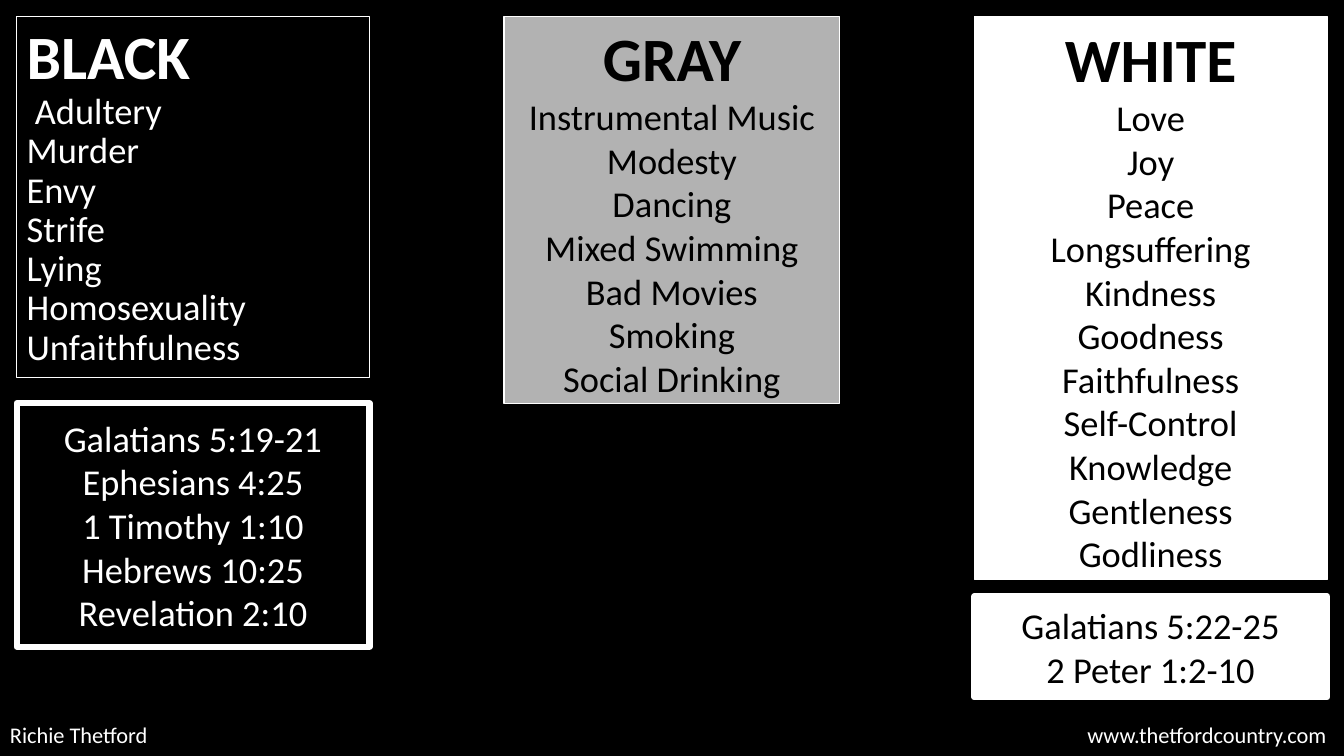
from dataclasses import dataclass

from lxml.etree import SubElement
from pptx import Presentation
from pptx.dml.color import RGBColor
from pptx.enum.shapes import MSO_SHAPE
from pptx.enum.text import MSO_ANCHOR, PP_ALIGN
from pptx.oxml.ns import qn
from pptx.util import Pt

EMU_PER_PX = 9525


@dataclass(frozen=True)
class Theme:
    black: RGBColor = RGBColor(0x00, 0x00, 0x00)
    gray: RGBColor = RGBColor(0xB2, 0xB2, 0xB2)
    white: RGBColor = RGBColor(0xFF, 0xFF, 0xFF)
    font: str = "Calibri"
    heading: int = 44
    body: int = 26
    footer: int = 16
    thin: float = 0.75
    thick: float = 4.5


THEME = Theme()
BLACK_ITEMS = [" Adultery", "Murder", "Envy", "Strife", "Lying",
               "Homosexuality", "Unfaithfulness"]
GRAY_ITEMS = ["Instrumental Music", "Modesty", "Dancing", "Mixed Swimming",
              "Bad Movies", "Smoking", "Social Drinking"]
WHITE_ITEMS = ["Love", "Joy", "Peace", "Longsuffering", "Kindness", "Goodness",
               "Faithfulness", "Self-Control", "Knowledge", "Gentleness", "Godliness"]
BLACK_VERSES = ["Galatians 5:19-21", "Ephesians 4:25", "1 Timothy 1:10",
                "Hebrews 10:25", "Revelation 2:10"]
WHITE_VERSES = ["Galatians 5:22-25", "2 Peter 1:2-10"]


def px(*lengths):
    return [length * EMU_PER_PX for length in lengths]


def write(paragraph, text, *, size, color, bold=False,
          align=PP_ALIGN.CENTER, spacing=1.0):
    paragraph.alignment = align
    paragraph.line_spacing = spacing
    run = paragraph.add_run()
    run.text = text
    font = run.font
    font.name, font.size, font.bold = THEME.font, Pt(size), bold
    font.color.rgb = color


def add_panel(slide, box, lines, *, fill, color, border, heading=None, **layout):
    """Draw a bordered rectangle holding an optional heading and a list of lines."""
    shape = slide.shapes.add_shape(MSO_SHAPE.RECTANGLE, *px(*box))
    shape.shadow.inherit = False
    shape.fill.solid()
    shape.fill.fore_color.rgb = fill
    shape.line.color.rgb = THEME.white
    shape.line.width = Pt(border)
    frame = shape.text_frame
    frame.word_wrap = True
    frame.vertical_anchor = MSO_ANCHOR.MIDDLE
    paragraph = frame.paragraphs[0]
    if heading:
        write(paragraph, heading, size=THEME.heading, color=color, bold=True, **layout)
        paragraph = frame.add_paragraph()
    for index, line in enumerate(lines):
        if index:
            paragraph = frame.add_paragraph()
        write(paragraph, line, size=THEME.body, color=color, **layout)


def add_footer(slide, box, left_text, right_text, tab):
    """Put two texts on one line, the second ending at a right tab stop."""
    frame = slide.shapes.add_textbox(*px(*box)).text_frame
    frame.word_wrap = True
    paragraph = frame.paragraphs[0]
    write(paragraph, f"{left_text}\t{right_text}", size=THEME.footer,
          color=THEME.white, align=PP_ALIGN.LEFT)
    properties = paragraph.runs[0].font and paragraph._p.get_or_add_pPr()
    stops = SubElement(properties, qn("a:tabLst"))
    SubElement(stops, qn("a:tab"), pos=str(px(tab)[0]), algn="r")


def main():
    presentation = Presentation()
    presentation.slide_width, presentation.slide_height = px(1280, 720)
    slide = presentation.slides.add_slide(presentation.slide_layouts[6])
    slide.background.fill.solid()
    slide.background.fill.fore_color.rgb = THEME.black

    on_black = {"fill": THEME.black, "color": THEME.white}
    on_gray = {"fill": THEME.gray, "color": THEME.black}
    on_white = {"fill": THEME.white, "color": THEME.black}

    add_panel(slide, (16, 16, 336, 344), BLACK_ITEMS, heading="BLACK",
              border=THEME.thin, align=PP_ALIGN.LEFT, spacing=0.9, **on_black)
    add_panel(slide, (480, 16, 320, 368), GRAY_ITEMS, heading="GRAY",
              border=THEME.thin, **on_gray)
    add_panel(slide, (928, 16, 336, 536), WHITE_ITEMS, heading="WHITE",
              border=THEME.thin, **on_white)
    add_panel(slide, (16, 384, 336, 232), BLACK_VERSES, border=THEME.thick, **on_black)
    add_panel(slide, (928, 568, 336, 96), WHITE_VERSES, border=THEME.thick, **on_white)
    add_footer(slide, (0, 682, 1280, 35), "Richie Thetford",
               "www.thetfordcountry.com", tab=1254)
    presentation.save("out.pptx")


if __name__ == "__main__":
    main()
